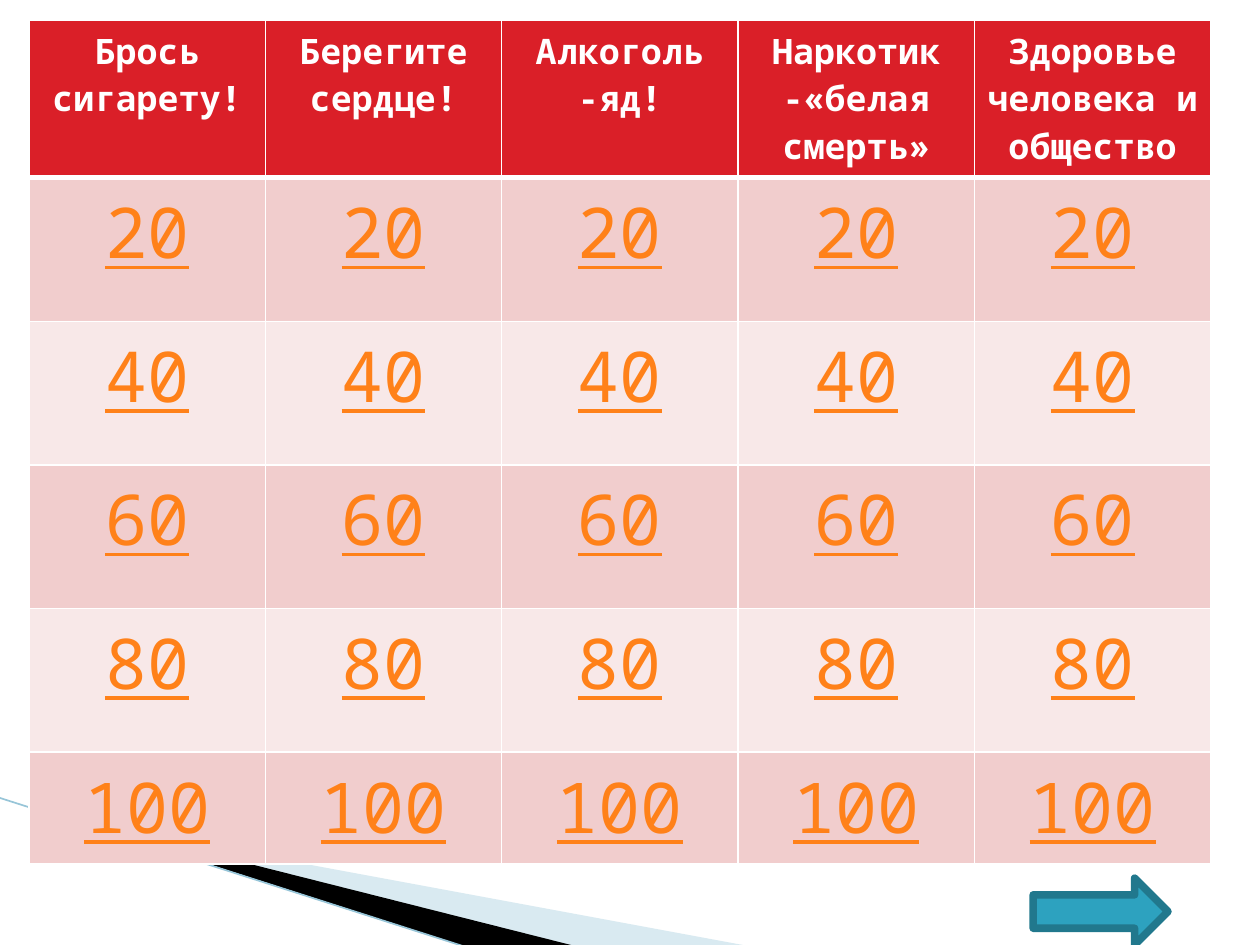
from lxml.etree import SubElement
from pptx import Presentation
from pptx.dml.color import RGBColor
from pptx.enum.shapes import MSO_CONNECTOR as Connector, MSO_SHAPE as Preset
from pptx.enum.text import PP_ALIGN as Align
from pptx.oxml.ns import qn
from pptx.util import Inches, Pt

FONT = "Noto Sans Mono"
COLORS = {
    "header": "DA1F28", "odd": "F1CDCD", "even": "F8E8E8", "white": "FFFFFF",
    "link": "FF8119", "swoosh": "A0CBDC", "black": "000000", "line": "97C5D8",
    "arrow": "2DA2BF", "arrow_edge": "21788D",
}
TOPICS = ["Брось сигарету!", "Берегите сердце!", "Алкоголь -яд!",
          "Наркотик -«белая смерть»", "Здоровье человека и общество"]
SCORES = [20, 40, 60, 80, 100]
ROW_HEIGHTS = [1.25] + [1.14] * 4 + [0.89]
COLUMN_WIDTH = 1.876
SWOOSHES = [
    ("swoosh", 40, [(0.55, 6.51), (5.95, 7.51), (4.56, 7.51), (0.55, 6.5)]),
    ("black", 100, [(0.53, 6.49), (4.57, 7.51), (3.72, 7.52), (0.54, 6.5)]),
]


def color(name):
    return RGBColor.from_string(COLORS[name])


def paint(shape, name):
    shape.shadow.inherit = False
    shape.fill.solid()
    shape.fill.fore_color.rgb = color(name)


def add_swoosh(page, name, opacity, points):
    builder = page.shapes.build_freeform(*map(Inches, points[0]), scale=1.0)
    builder.add_line_segments([tuple(map(Inches, point)) for point in points[1:]])
    shape = builder.convert_to_shape()
    paint(shape, name)
    shape.line.fill.background()
    if opacity < 100:
        tint = shape.fill._xPr.find(".//" + qn("a:srgbClr"))
        SubElement(tint, qn("a:alpha"), val=str(opacity * 1000))


def set_borders(cell, bottom):
    """Rule all four sides in white; the borders must precede the fill."""
    properties = cell._tc.get_or_add_tcPr()
    for side, points in (("L", 1), ("R", 1), ("T", 1), ("B", bottom)):
        border = SubElement(properties, qn(f"a:ln{side}"), w=str(Pt(points)))
        fill = SubElement(border, qn("a:solidFill"))
        SubElement(fill, qn("a:srgbClr"), val=COLORS["white"])


def fill_cell(cell, text, row):
    header = row == 0
    set_borders(cell, 3 if header else 1)
    cell.fill.solid()
    cell.fill.fore_color.rgb = color("header" if header else "odd" if row % 2 else "even")
    cell.text = text
    para = cell.text_frame.paragraphs[0]
    para.alignment = Align.CENTER
    font = para.font
    font.name, font.size = FONT, Pt(20 if header else 40)
    font.bold, font.underline = header, not header
    font.color.rgb = color("white" if header else "link")


def add_board(page):
    rows = [TOPICS] + [[str(score)] * len(TOPICS) for score in SCORES]
    table = page.shapes.add_table(
        len(rows), len(TOPICS), Inches(0.23), Inches(0.16),
        Inches(COLUMN_WIDTH * len(TOPICS)), Inches(sum(ROW_HEIGHTS))).table
    for column in table.columns:
        column.width = Inches(COLUMN_WIDTH)
    for row, (texts, height) in enumerate(zip(rows, ROW_HEIGHTS)):
        table.rows[row].height = Inches(height)
        for column, text in enumerate(texts):
            fill_cell(table.cell(row, column), text, row)


def main():
    deck = Presentation()
    deck.slide_width, deck.slide_height = Inches(10), Inches(7.5)
    page = deck.slides.add_slide(deck.slide_layouts[6])

    for swoosh in SWOOSHES:
        add_swoosh(page, *swoosh)
    edge = page.shapes.add_connector(
        Connector.STRAIGHT, *map(Inches, (-0.01, 6.33, 3.71, 7.52)))
    edge.line.color.rgb, edge.line.width = color("line"), Pt(0.95)
    SubElement(edge._element.spPr, qn("a:effectLst"))

    add_board(page)

    arrow = page.shapes.add_shape(
        Preset.RIGHT_ARROW, *map(Inches, (8.2, 6.97, 1.07, 0.53)))
    paint(arrow, "arrow")
    arrow.line.color.rgb, arrow.line.width = color("arrow_edge"), Pt(4.33)
    deck.save("out.pptx")


if __name__ == "__main__":
    main()
